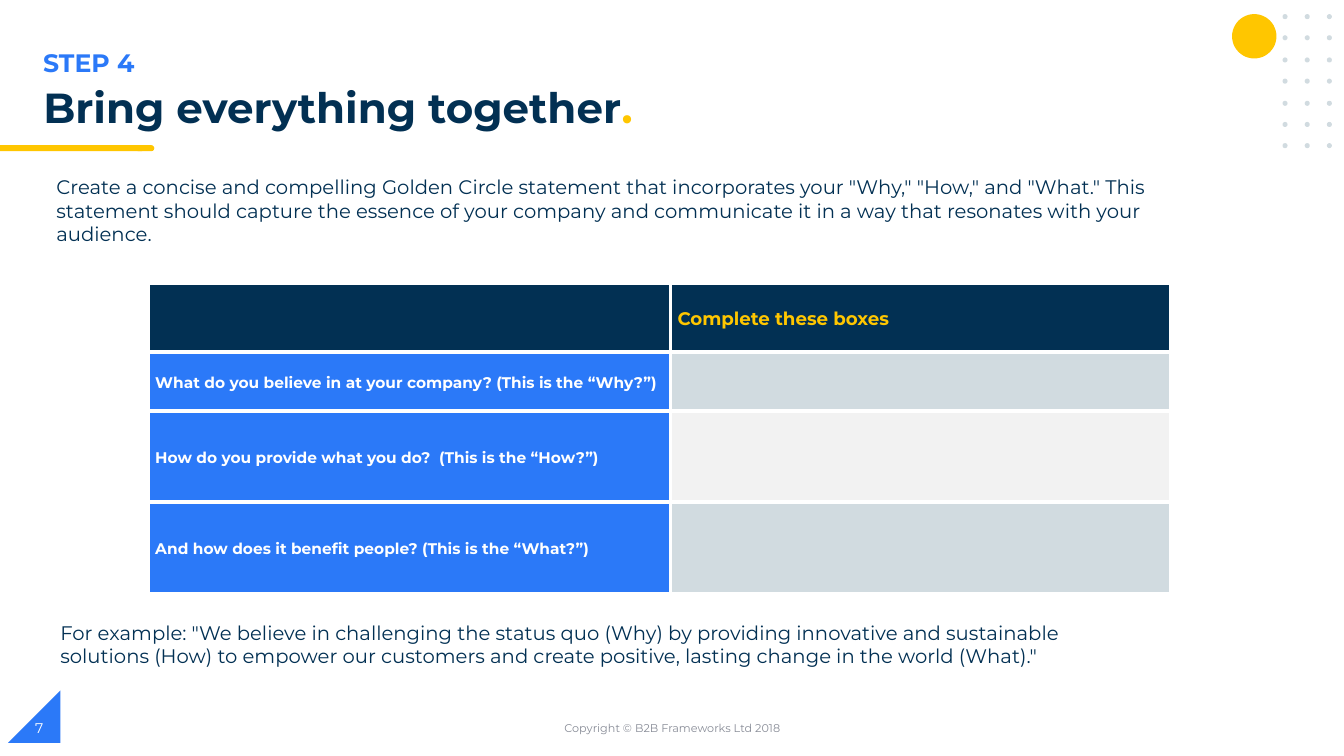
import lxml.etree
import pptx
import pptx.util
import pptx.oxml.ns
from pptx.dml.color import RGBColor
from pptx.enum.shapes import MSO_SHAPE
from pptx.enum.text import MSO_ANCHOR, MSO_AUTO_SIZE, PP_ALIGN

PX = 9144  # EMU in one px, at 100 px to the inch
FONT = "Montserrat"
NAVY = RGBColor(0x02, 0x30, 0x53)
BLUE = RGBColor(0x2B, 0x79, 0xF8)
YELLOW = RGBColor(0xFF, 0xC6, 0x00)
MIST = RGBColor(0xD1, 0xDB, 0xE0)
PALE = RGBColor(0xF2, 0xF2, 0xF2)
GREY = RGBColor(0x88, 0x8C, 0x97)
WHITE = RGBColor(0xFF, 0xFF, 0xFF)

# Content
TITLE = ("Bring everything together", ".")
STEP = "STEP 4"
INTRO = ('Create a concise and compelling Golden Circle statement that incorporates your '
         '"Why," "How," and "What." This statement should capture the essence of your company '
         'and communicate it in a way that resonates with your audience.')
EXAMPLE = ('For example: "We believe in challenging the status quo (Why) by providing innovative '
           'and sustainable solutions (How) to empower our customers and create positive, '
           'lasting change in the world (What)."')
COPYRIGHT = "Copyright © B2B Frameworks Ltd 2018"
PAGE_NUMBER = "7"
HEADING = "Complete these boxes"
# question, row height, colour of the answer cell
QUESTIONS = [
    ("What do you believe in at your company? (This is the “Why?”)", 59, MIST),
    ("How do you provide what you do?  (This is the “How?”)", 90, PALE),
    ("And how does it benefit people? (This is the “What?”)", 91, MIST),
]
HEADER_HEIGHT = 68
COLUMN_WIDTHS = (518, 496)


def px(*lengths):
    return [pptx.util.Emu(length * PX) for length in lengths]


def set_font(font, size, color, bold=False):
    font.name = FONT
    font.size = pptx.util.Pt(size)
    font.bold = bold
    font.color.rgb = color


def add_shape(kind, place, color):
    shape = page.shapes.add_shape(kind, *px(*place))
    shape.shadow.inherit = False
    shape.fill.solid()
    shape.fill.fore_color.rgb = color
    shape.line.fill.background()
    return shape


def add_text(text, place, size, color, bold=False, anchor=MSO_ANCHOR.TOP, align=PP_ALIGN.LEFT):
    frame = page.shapes.add_textbox(*px(*place)).text_frame
    frame.word_wrap = True
    frame.vertical_anchor = anchor
    para = frame.paragraphs[0]
    para.text = text
    para.alignment = align
    set_font(para.font, size, color, bold)


def fill_cell(cell, fill, text="", size=11, color=WHITE):
    properties = cell._tc.get_or_add_tcPr()
    for side in ("lnL", "lnR", "lnT", "lnB"):
        border = lxml.etree.SubElement(properties, pptx.oxml.ns.qn("a:" + side),
                                       w=str(pptx.util.Pt(3)))
        solid = lxml.etree.SubElement(border, pptx.oxml.ns.qn("a:solidFill"))
        lxml.etree.SubElement(solid, pptx.oxml.ns.qn("a:srgbClr"), val=str(WHITE))
    cell.fill.solid()
    cell.fill.fore_color.rgb = fill
    cell.margin_left, cell.margin_right, cell.margin_top, cell.margin_bottom = px(7, 7, 0, 0)
    cell.vertical_anchor = MSO_ANCHOR.MIDDLE
    para = cell.text_frame.paragraphs[0]
    para.text = text
    para.line_spacing = 1.15
    set_font(para.font, size, color, True)


deck = pptx.Presentation()
deck.slide_width, deck.slide_height = px(1333, 750)
page = deck.slides.add_slide(deck.slide_layouts[5])

# Corner triangle and title underline
corner = add_shape(MSO_SHAPE.RIGHT_TRIANGLE, (8, 685, 52, 52), BLUE)
corner._element.spPr.find(pptx.oxml.ns.qn("a:xfrm")).set("flipH", "1")
add_shape(MSO_SHAPE.FLOWCHART_TERMINATOR, (134, 144, 19, 6), YELLOW)
add_shape(MSO_SHAPE.RECTANGLE, (0, 144, 141, 6), YELLOW)

# Sun and dot grid
add_shape(MSO_SHAPE.OVAL, (1222, 14, 44, 44), YELLOW)
for row in range(7):
    for column in range(3):
        add_shape(MSO_SHAPE.OVAL, (1272 + 22 * column, 14 + round(21.4 * row), 5, 5), MIST)

# Title
title = page.shapes.title
title.left, title.top, title.width, title.height = px(33, 82, 1208, 56)
title.text_frame.auto_size = MSO_AUTO_SIZE.NONE
title.text_frame.vertical_anchor = MSO_ANCHOR.TOP
heading = title.text_frame.paragraphs[0]
heading.alignment = PP_ALIGN.LEFT
heading.line_spacing = 0.9
for words, color in zip(TITLE, (NAVY, YELLOW)):
    span = heading.add_run()
    span.text = words
    set_font(span.font, 30, color, True)

# Text and footer
add_text(STEP, (33, 42, 669, 40), 18, BLUE, bold=True)
add_text(INTRO, (46, 169, 1185, 57), 14, NAVY)
add_text(EXAMPLE, (50, 611, 1014, 57), 14, NAVY)
add_text(COPYRIGHT, (442, 702, 450, 40), 8, GREY, anchor=MSO_ANCHOR.MIDDLE, align=PP_ALIGN.CENTER)
add_text(PAGE_NUMBER, (25, 702, 300, 40), 10, WHITE, anchor=MSO_ANCHOR.MIDDLE)

# Question table
heights = [HEADER_HEIGHT] + [height for _, height, _ in QUESTIONS]
table = page.shapes.add_table(len(heights), len(COLUMN_WIDTHS),
                              *px(147, 281, sum(COLUMN_WIDTHS), sum(heights))).table
for column, width in zip(table.columns, px(*COLUMN_WIDTHS)):
    column.width = width
for row, height in zip(table.rows, px(*heights)):
    row.height = height
fill_cell(table.cell(0, 0), NAVY)
fill_cell(table.cell(0, 1), NAVY, HEADING, 13, YELLOW)
for number, (question, _, answer_color) in enumerate(QUESTIONS, start=1):
    fill_cell(table.cell(number, 0), BLUE, question)
    fill_cell(table.cell(number, 1), answer_color)

deck.save("out.pptx")
